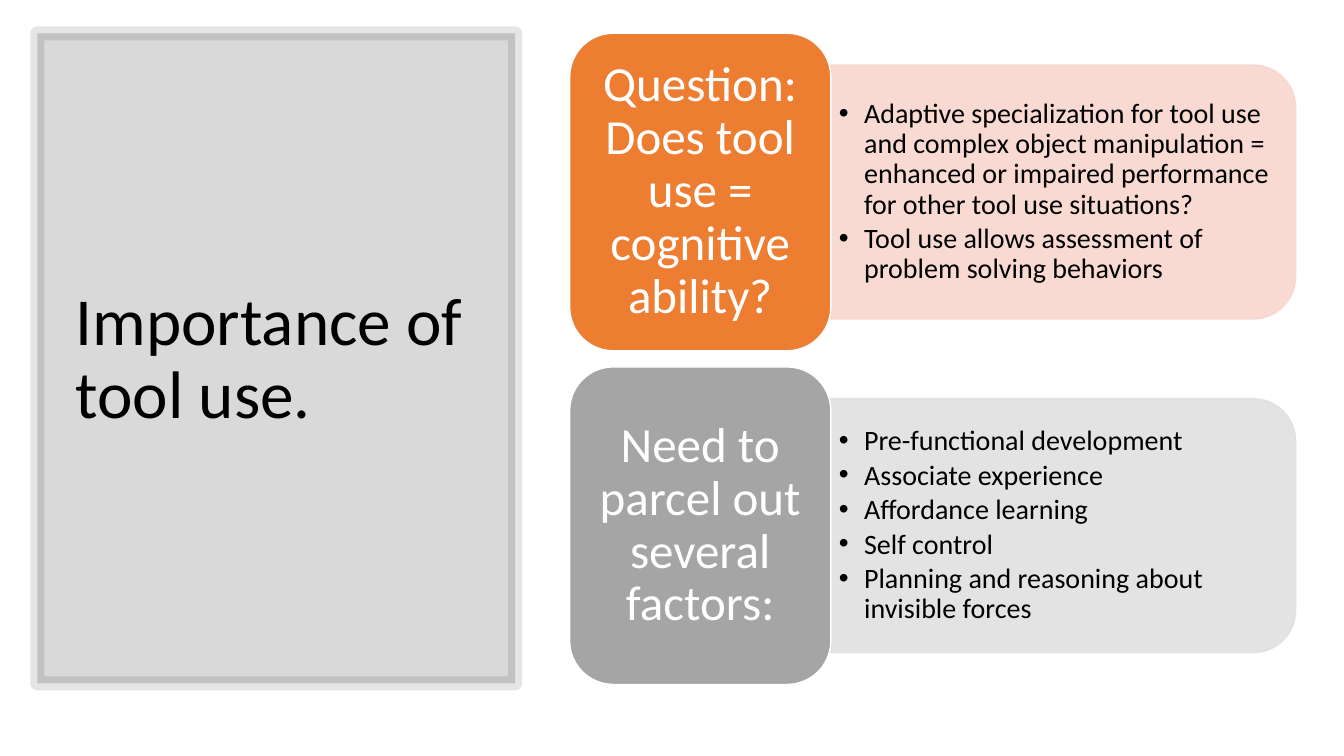
from lxml.etree import SubElement
from pptx import Presentation
from pptx.dml.color import RGBColor
from pptx.enum.shapes import MSO_SHAPE
from pptx.enum.text import MSO_ANCHOR, MSO_AUTO_SIZE, PP_ALIGN
from pptx.oxml.ns import qn
from pptx.util import Inches, Pt

BLACK = RGBColor(0x00, 0x00, 0x00)
WHITE = RGBColor(0xFF, 0xFF, 0xFF)
ORANGE = RGBColor(0xED, 0x7D, 0x31)
PEACH = RGBColor(0xF8, 0xD7, 0xCE)
GRAY = RGBColor(0xA5, 0xA5, 0xA5)
LIGHT_GRAY = RGBColor(0xE1, 0xE1, 0xE1)
FONT = "Calibri"

ROW_TOP, ROW_PITCH = 0.33, 3.31
HEADING_LEFT, HEADING_WIDTH, HEADING_HEIGHT = 5.65, 2.59, 3.15
PANEL_LEFT, PANEL_WIDTH, PANEL_HEIGHT = 8.24, 4.61, 2.52
BULLETS_WIDTH, BULLETS_HEIGHT = 4.49, 2.27

ROWS = [
    ("Question: Does tool use = cognitive ability?", ORANGE, PEACH, [
        "Adaptive specialization for tool use and complex object manipulation = "
        "enhanced or impaired performance for other tool use situations?",
        "Tool use allows assessment of problem solving behaviors",
    ]),
    ("Need to parcel out several factors:", GRAY, LIGHT_GRAY, [
        "Pre-functional development",
        "Associate experience",
        "Affordance learning",
        "Self control",
        "Planning and reasoning about invisible forces",
    ]),
]


def set_opacity(color_format_parent, percent):
    color = color_format_parent.find(qn("a:solidFill")).find(qn("a:srgbClr"))
    SubElement(color, qn("a:alpha")).set("val", str(percent * 1000))


def add_filled_shape(page, kind, box, fill, line, line_width,
                     fill_opacity=100, line_opacity=100):
    shape = page.shapes.add_shape(kind, *(Inches(length) for length in box))
    shape.shadow.inherit = False
    shape.fill.solid()
    shape.fill.fore_color.rgb = fill
    shape.line.color.rgb = line
    shape.line.width = Pt(line_width)
    properties = shape._element.spPr
    if fill_opacity < 100:
        set_opacity(properties, fill_opacity)
    if line_opacity < 100:
        set_opacity(properties.find(qn("a:ln")), line_opacity)
    return shape


def prepare_frame(frame, side_inset, end_inset):
    frame.word_wrap = True
    frame.auto_size = MSO_AUTO_SIZE.NONE
    frame.vertical_anchor = MSO_ANCHOR.MIDDLE
    frame.margin_left = frame.margin_right = Inches(side_inset)
    frame.margin_top = frame.margin_bottom = Inches(end_inset)


def write_paragraph(para, text, size, color, align=PP_ALIGN.LEFT):
    para.alignment = align
    para.line_spacing = 0.9
    span = para.add_run()
    span.text = text
    span.font.name = FONT
    span.font.size = Pt(size)
    span.font.color.rgb = color


def add_bullet(para):
    para.level = 1
    para.space_after = Pt(3)
    properties = para._p.get_or_add_pPr()
    properties.set("marL", str(Inches(0.25)))
    properties.set("indent", str(Inches(-0.25)))
    SubElement(properties, qn("a:buFont")).set("typeface", "Arial")
    SubElement(properties, qn("a:buChar")).set("char", "•")


def add_title(page, text):
    title = page.shapes.title
    title.left, title.top = Inches(0.65), Inches(0.7)
    title.width, title.height = Inches(4.16), Inches(5.75)
    prepare_frame(title.text_frame, 0.1, 0.05)
    write_paragraph(title.text_frame.paragraphs[0], text, 48, BLACK)


def add_panel(page, middle, color):
    """Add a box rounded on its right side, centred on the given height."""
    center = PANEL_LEFT + PANEL_WIDTH / 2
    box = (center - PANEL_HEIGHT / 2, middle - PANEL_WIDTH / 2,
           PANEL_HEIGHT, PANEL_WIDTH)
    panel = add_filled_shape(page, MSO_SHAPE.ROUND_2_SAME_RECTANGLE, box,
                             color, color, 1, 90, 90)
    panel.rotation = 90


def add_bullet_list(page, middle, items):
    box = page.shapes.add_textbox(
        Inches(PANEL_LEFT), Inches(middle - BULLETS_HEIGHT / 2),
        Inches(BULLETS_WIDTH), Inches(BULLETS_HEIGHT))
    frame = box.text_frame
    prepare_frame(frame, 0.08, 0.04)
    for index, item in enumerate(items):
        para = frame.add_paragraph() if index else frame.paragraphs[0]
        write_paragraph(para, item, 20, BLACK)
        add_bullet(para)


def add_heading(page, top, text, color):
    box = (HEADING_LEFT, top, HEADING_WIDTH, HEADING_HEIGHT)
    heading = add_filled_shape(page, MSO_SHAPE.ROUNDED_RECTANGLE, box,
                               color, WHITE, 1)
    prepare_frame(heading.text_frame, 0.15, 0.07)
    write_paragraph(heading.text_frame.paragraphs[0], text, 35, WHITE,
                    PP_ALIGN.CENTER)


def main():
    deck = Presentation()
    deck.slide_width, deck.slide_height = Inches(13.33), Inches(7.5)
    page = deck.slides.add_slide(deck.slide_layouts[5])

    frame = add_filled_shape(page, MSO_SHAPE.RECTANGLE, (0.37, 0.33, 4.74, 6.45),
                             BLACK, BLACK, 10, 15, 10)
    page.shapes.title._element.addprevious(frame._element)
    add_title(page, "Importance of tool use.")

    for index, (heading, color, panel_color, items) in enumerate(ROWS):
        top = ROW_TOP + index * ROW_PITCH
        middle = top + HEADING_HEIGHT / 2
        add_panel(page, middle, panel_color)
        add_bullet_list(page, middle, items)
        add_heading(page, top, heading, color)

    deck.save("out.pptx")


if __name__ == "__main__":
    main()
